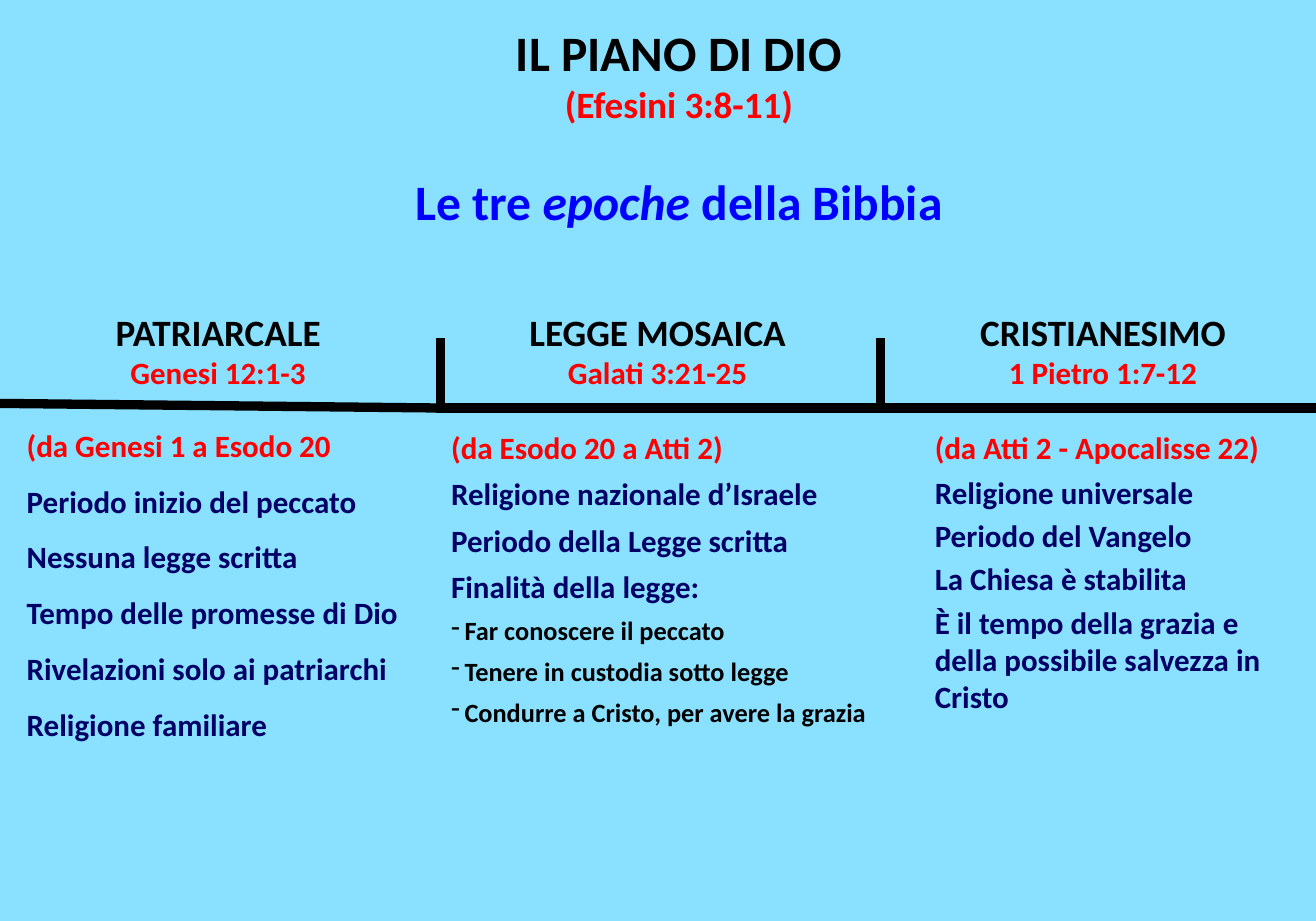
from dataclasses import dataclass

from lxml import etree
from pptx import Presentation
from pptx.dml.color import RGBColor
from pptx.enum.shapes import MSO_CONNECTOR
from pptx.enum.text import MSO_AUTO_SIZE, PP_ALIGN
from pptx.oxml.ns import qn
from pptx.util import Cm, Inches, Pt

WIDE, HIGH = Cm(30), Cm(21)
LINE = MSO_CONNECTOR.STRAIGHT
GROW = MSO_AUTO_SIZE.SHAPE_TO_FIT_TEXT
MID, LEFT = PP_ALIGN.CENTER, PP_ALIGN.LEFT
COL = 33.45
BASE = 44.3


@dataclass(frozen=True)
class Theme:
    font: str = "Calibri"
    sky: str = "89E0FF"
    black: str = "000000"
    red: str = "FF0000"
    blue: str = "0000FF"
    navy: str = "000066"
    title: int = 32
    head: int = 24
    body: int = 20
    small: int = 17
    rule: int = 6


LOOK = Theme()


def apply(item, values):
    for name, value in values.items():
        setattr(item, name, value)


def across(share):
    return int(WIDE * share / 100)


def down(share):
    return int(HIGH * share / 100)


def add_rule(slide, start, end):
    rule = slide.shapes.add_connector(
        LINE, across(start[0]), down(start[1]), across(end[0]), down(end[1]))
    rule.line.width = Pt(LOOK.rule)
    rule.line.color.rgb = RGBColor.from_string(LOOK.black)
    etree.SubElement(rule._element.spPr, qn("a:effectLst"))


def add_box(slide, area, wrap=True):
    left, top, width, height = area
    box = slide.shapes.add_textbox(
        across(left), down(top), across(width), down(height))
    apply(box.text_frame, {"word_wrap": wrap, "auto_size": GROW})
    return box.text_frame


def add_text(frame, parts, size, color, align=LEFT, before=0, after=0, dash=False):
    fresh = not frame.paragraphs[0].runs
    para = frame.paragraphs[0] if fresh else frame.add_paragraph()
    apply(para, {"alignment": align, "space_before": Pt(before),
                 "space_after": Pt(after)})
    for text, slant in parts:
        run = para.add_run()
        run.text = text
        apply(run.font, {"name": LOOK.font, "size": Pt(size),
                         "bold": True, "italic": slant})
        run.font.color.rgb = RGBColor.from_string(color)
    if dash:
        props = para._p.get_or_add_pPr()
        apply_dash(props)


def apply_dash(props):
    props.set("marL", str(Inches(0.12)))
    props.set("indent", str(-Inches(0.12)))
    etree.SubElement(props, qn("a:buFontTx"))
    etree.SubElement(props, qn("a:buChar")).set("char", "-")


def add_title(slide):
    frame = add_box(slide, (21.4, 1.8, 60.4, 24.1))
    add_text(frame, [("IL PIANO DI DIO", False)], LOOK.title, LOOK.black, MID)
    add_text(frame, [("(Efesini 3:8-11)", False)], LOOK.head, LOOK.red, MID)
    add_text(frame, [("Le tre ", False), ("epoche", True), (" della Bibbia", False)],
             LOOK.title, LOOK.blue, MID, before=29)


def add_head(slide, left, width, name, verse):
    frame = add_box(slide, (left, 33, width, 10.2), wrap=False)
    add_text(frame, [(name, False)], LOOK.head, LOOK.black)
    add_text(frame, [(verse, False)], LOOK.body, LOOK.red, MID)


def add_epoch(slide, area, span, facts, gaps, aims=()):
    frame = add_box(slide, area)
    first, rest = gaps
    add_text(frame, [(span, False)], LOOK.body, LOOK.red, before=first, after=first)
    for fact in facts:
        add_text(frame, [(fact, False)], LOOK.body, LOOK.navy,
                 before=rest, after=rest)
    for aim in aims:
        add_text(frame, [(aim, False)], LOOK.small, LOOK.black,
                 before=rest, after=rest, dash=True)


def main():
    deck = Presentation()
    deck.slide_width = WIDE
    deck.slide_height = HIGH
    slide = deck.slides.add_slide(deck.slide_layouts[6])
    fill = slide.background.fill
    fill.solid()
    fill.fore_color.rgb = RGBColor.from_string(LOOK.sky)

    for col in range(3):
        rise = 0 if col else 0.5
        add_rule(slide, (col * COL, BASE - rise), (min((col + 1) * COL, 100), BASE))

    add_title(slide)
    add_epoch(slide, (1.2, 45.7, 30, 35.8), "(da Genesi 1 a Esodo 20",
              ("Periodo inizio del peccato", "Nessuna legge scritta",
               "Tempo delle promesse di Dio", "Rivelazioni solo ai patriarchi",
               "Religione familiare"), (6, 6))
    add_epoch(slide, (COL, 45.9, 33.4, 34), "(da Esodo 20 a Atti 2)",
              ("Religione nazionale d’Israele", "Periodo della Legge scritta",
               "Finalità della legge:"), (3, 3),
              ("Far conoscere il peccato", "Tenere in custodia sotto legge",
               "Condurre a Cristo, per avere la grazia"))
    add_epoch(slide, (70.2, 45.9, 27.2, 33.3), "(da Atti 2 - Apocalisse 22)",
              ("Religione universale", "Periodo del Vangelo",
               "La Chiesa è stabilita",
               "È il tempo della grazia e della possibile salvezza in Cristo"),
              (3, 2))
    for head in (
        (7.95, 17.4, "PATRIARCALE", "Genesi 12:1-3"),
        (39.4, 21.3, "LEGGE MOSAICA", "Galati 3:21-25"),
        (73.65, 20.6, "CRISTIANESIMO", "1 Pietro 1:7-12"),
    ):
        add_head(slide, *head)
    for col in (1, 2):
        add_rule(slide, (col * COL, 44.8), (col * COL, 36.7))
    deck.save("out.pptx")


if __name__ == "__main__":
    main()
